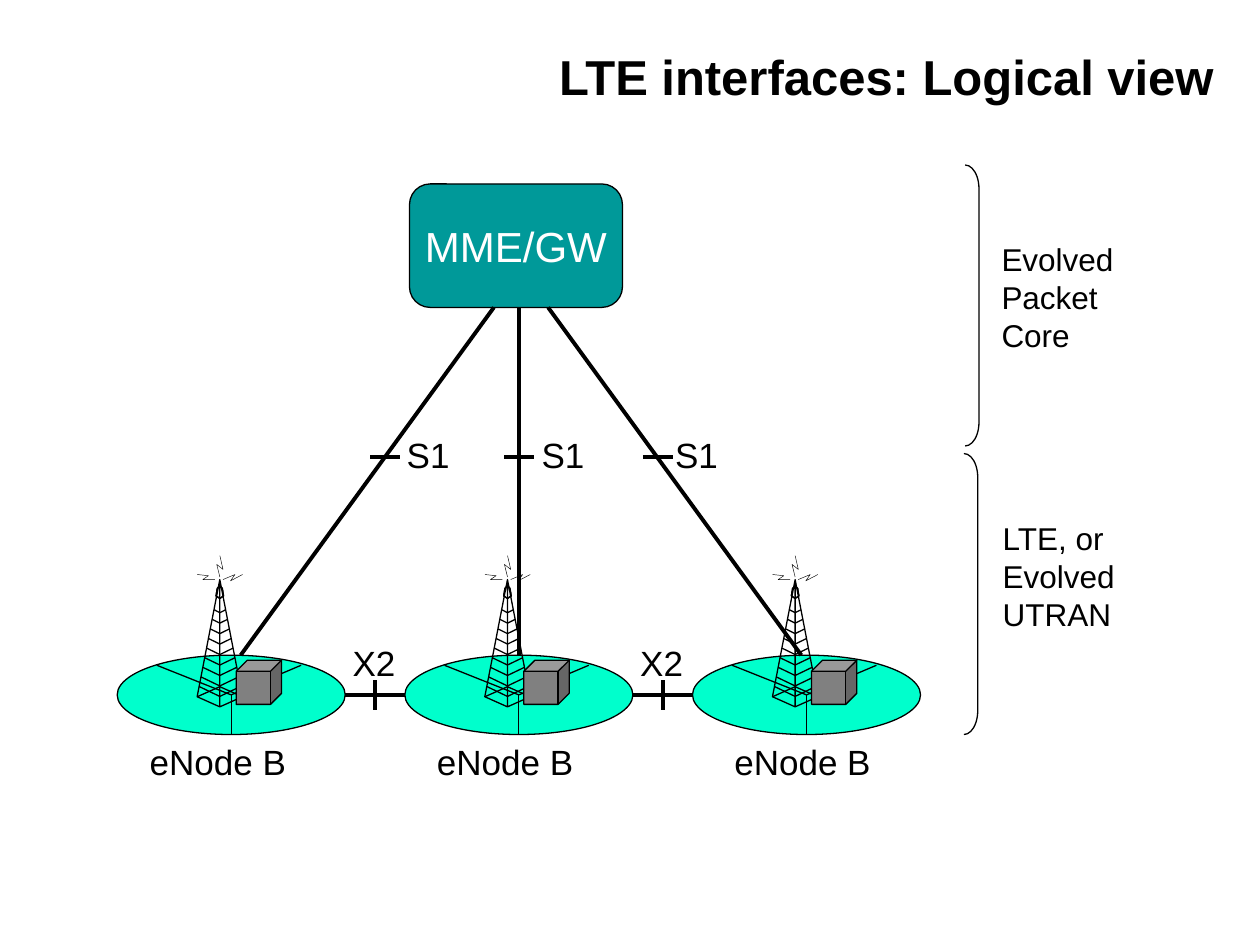
from dataclasses import dataclass

from lxml import etree
from pptx import Presentation
from pptx.dml.color import RGBColor
from pptx.enum.shapes import MSO_CONNECTOR, MSO_SHAPE
from pptx.enum.text import MSO_ANCHOR, PP_ALIGN
from pptx.oxml.ns import qn
from pptx.util import Inches, Pt

STRAIGHT = MSO_CONNECTOR.STRAIGHT
ROUND_RECT, ELLIPSE = MSO_SHAPE.ROUNDED_RECTANGLE, MSO_SHAPE.OVAL
CUBE, BRACKET = MSO_SHAPE.CUBE, MSO_SHAPE.RIGHT_BRACKET
LEFT, CENTER, RIGHT = PP_ALIGN.LEFT, PP_ALIGN.CENTER, PP_ALIGN.RIGHT
TOP, MIDDLE = MSO_ANCHOR.TOP, MSO_ANCHOR.MIDDLE

Point = tuple[float, float]
WIDTH, HEIGHT = Inches(10), Inches(7.5)
CELL = WIDTH / 100  # the grid has 100 columns and 75 rows of square cells


@dataclass(frozen=True)
class Theme:
    font: str = "Arial"
    ink: str = "000000"
    paper: str = "FFFFFF"
    core: str = "009999"
    cell_area: str = "00FFCC"
    cabinet: str = "808080"
    title: float = 28
    box: float = 24
    label: float = 20
    note: float = 18
    hair: float = 0.25
    thin: float = 0.75
    thick: float = 2.25


@dataclass(frozen=True)
class Box:
    x: float
    y: float
    w: float
    h: float


@dataclass(frozen=True)
class Label:
    text: str
    box: Box
    size: float
    wrap: bool = True
    align: PP_ALIGN = LEFT
    anchor: MSO_ANCHOR = TOP
    bold: bool = False


@dataclass(frozen=True)
class Outline:
    points: tuple[Point, ...]
    weight: float
    fill: str | None = None


T = Theme()

# eNode B cells: one every PITCH columns
NODE_X, NODE_Y, NODE_W, NODE_H, PITCH = 9.3, 52, 18.1, 6.3, 22.83
NODES = [NODE_X + i * PITCH for i in range(3)]
HUB: Point = (NODE_W / 2, NODE_H / 2)
SECTOR_ENDS = ((3.15, 0.8), (14.6, 0.8), (NODE_W / 2, NODE_H))

# Tower outlines, measured from the mast axis and the top of the cell
MAST_X = 8.15
HEAD = ((-0.2, -5.3), (0, -5.5), (0.2, -5.3), (0.3, -4.7), (0, -4.5), (-0.3, -4.7), (-0.2, -5.3))
MAST = ((0, -6), (0, 4.1), (-1.8, 3.3), (0, -6), (1.8, 3.3), (0, 4.1))
RUNGS = [
    ((-half, y), (0, y + 0.23 + 0.07 * i), (half, y))
    for i, half, y in ((i, 0.45 + 0.15 * i, -3.6 + 0.76 * i) for i in range(9))
]
SPARKS = (
    ((-0.4, -6), (-1.35, -6), (-0.9, -6.3), (-1.8, -6.4)),
    ((1.8, -6.4), (0.85, -5.9), (1.2, -6.4), (0.25, -6)),
    ((0, -6.2), (-0.25, -7.2), (0.25, -6.8), (0, -7.9)),
)
TOWER = [
    Outline(HEAD, T.thin, T.paper),
    *(Outline(pts, T.thin) for pts in (((-1.8, 3.3), (0, 2.5), (1.8, 3.3)), MAST, *RUNGS, HEAD)),
    *(Outline(pts, T.hair) for pts in SPARKS),
]

LABELS = [
    *(Label("S1", Box(x, 33.9, 6.7, 4.3), T.label) for x in (31.3, 42, 52.6)),
    *(Label("X2", Box(x + 17.7, 50.4, 6.7, 4.3), T.label) for x in NODES[:2]),
    *(Label("eNode B", Box(x, 58.3, 13, 4.3), T.label) for x in (10.9, 33.7, 57.3)),
]
NOTES = [
    Label("Evolved\nPacket\nCore", Box(78.5, 18.6, 10.9, 10), T.note, wrap=False),
    Label("LTE, or\vEvolved\nUTRAN", Box(78.6, 40.7, 10.9, 10), T.note, wrap=False),
]
TITLE = Label("LTE interfaces: Logical view", Box(5, 3, 92.3, 6.1), T.title,
              align=RIGHT, anchor=MIDDLE, bold=True)
CORE = Label("MME/GW", Box(32.5, 14.6, 16.9, 9.8), T.box, wrap=False, align=CENTER, anchor=MIDDLE)
BRACKETS = [Box(76.6, 13.1, 1.1, 22.3), Box(76.5, 36, 1.1, 22.3)]

S1_LINKS = (((19.1, NODE_Y), (39.2, 24.4)), ((41.2, NODE_Y), (41.2, 24.4)), ((63.6, NODE_Y), (43.5, 24.4)))
S1_TICKS, S1_TICK_Y, TICK = (30.55, 41.2, 52.2), 36.3, 2.35


def grid(*values: float) -> list[int]:
    return [round(v * CELL) for v in values]


def place(box: Box) -> list[int]:
    return grid(box.x, box.y, box.w, box.h)


def paint(sp, fill: str | None, weight: float) -> None:
    sp.shadow.inherit = False
    if fill:
        sp.fill.solid()
        sp.fill.fore_color.rgb = RGBColor.from_string(fill)
    else:
        sp.fill.background()
    sp.line.color.rgb = RGBColor.from_string(T.ink)
    sp.line.width = Pt(weight)


def write(sp, label: Label, color: str) -> None:
    tf = sp.text_frame
    tf.word_wrap, tf.vertical_anchor = label.wrap, label.anchor
    tf.text = label.text
    for p in tf.paragraphs:
        p.alignment = label.align
        p.font.name, p.font.size, p.font.bold = T.font, Pt(label.size), label.bold
        p.font.color.rgb = RGBColor.from_string(color)


def add_label(shapes, label: Label) -> None:
    write(shapes.add_textbox(*place(label.box)), label, T.ink)


def add_preset(shapes, kind: MSO_SHAPE, box: Box, fill: str | None, adj: float | None = None):
    sp = shapes.add_shape(kind, *place(box))
    paint(sp, fill, T.thin)
    if adj is not None:
        sp.adjustments[0] = adj
    return sp


def add_line(shapes, start: Point, end: Point, weight: float) -> None:
    line = shapes.add_connector(STRAIGHT, *grid(*start, *end))
    line.line.color.rgb = RGBColor.from_string(T.ink)
    line.line.width = Pt(weight)
    etree.SubElement(line._element.spPr, qn("a:effectLst"))


def add_outline(shapes, outline: Outline, x: float, y: float) -> None:
    first, *rest = [tuple(grid(x + dx, y + dy)) for dx, dy in outline.points]
    builder = shapes.build_freeform(*first)
    builder.add_line_segments(rest, close=outline.fill is not None)
    paint(builder.convert_to_shape(), outline.fill, outline.weight)


def add_node(shapes, x: float) -> None:
    """Draw one eNode B: cell with three sectors, tower and cabinet."""
    add_preset(shapes, ELLIPSE, Box(x, NODE_Y, NODE_W, NODE_H), T.cell_area)
    for dx, dy in SECTOR_ENDS:
        add_line(shapes, (x + HUB[0], NODE_Y + HUB[1]), (x + dx, NODE_Y + dy), T.thin)
    for outline in TOWER:
        add_outline(shapes, outline, x + MAST_X, NODE_Y)
    add_preset(shapes, CUBE, Box(x + 9.45, NODE_Y + 0.4, 3.6, 3.5), T.cabinet, 0.25)


def add_links(shapes) -> None:
    mid_y = NODE_Y + HUB[1]
    for left, right in zip(NODES, NODES[1:]):
        start = left + NODE_W
        mid_x = (start + right) / 2
        add_line(shapes, (start, mid_y), (right, mid_y), T.thick)
        add_line(shapes, (mid_x, mid_y - TICK / 2), (mid_x, mid_y + TICK / 2), T.thick)
    for start, end in S1_LINKS:
        add_line(shapes, start, end, T.thick)
    for x in S1_TICKS:
        add_line(shapes, (x - TICK / 2, S1_TICK_Y), (x + TICK / 2, S1_TICK_Y), T.thick)


def main() -> None:
    prs = Presentation()
    prs.slide_width, prs.slide_height = WIDTH, HEIGHT
    shapes = prs.slides.add_slide(prs.slide_layouts[6]).shapes
    write(add_preset(shapes, ROUND_RECT, CORE.box, T.core, 0.167), CORE, T.paper)
    for label in LABELS:
        add_label(shapes, label)
    for x in NODES:
        add_node(shapes, x)
    add_links(shapes)
    for box in BRACKETS:
        add_preset(shapes, BRACKET, box, None, 1.727)
    for label in (*NOTES, TITLE):
        add_label(shapes, label)
    prs.save("out.pptx")


if __name__ == "__main__":
    main()
